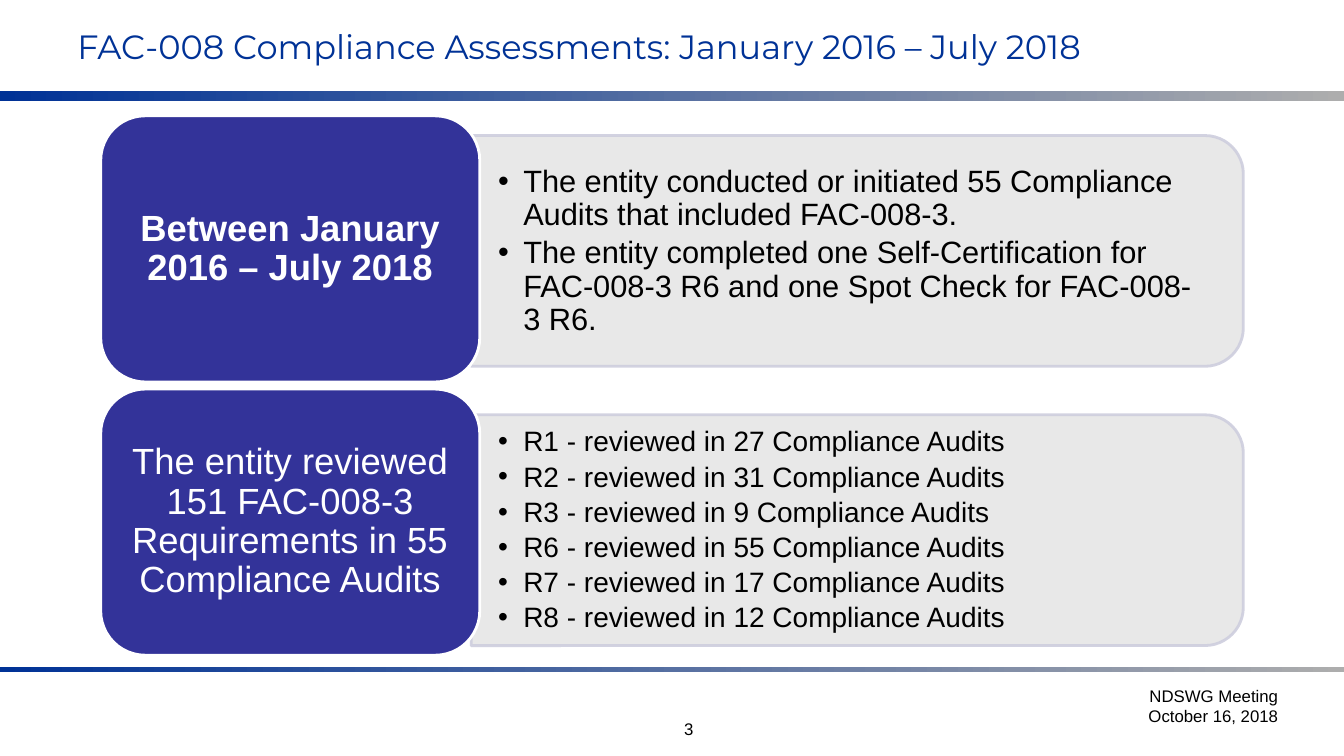
"""Build the FAC-008 compliance assessment slide."""
from dataclasses import dataclass
from typing import Any, NamedTuple

from lxml import etree
from pptx import Presentation
from pptx.dml.color import RGBColor
from pptx.enum.shapes import MSO_SHAPE
from pptx.enum.text import MSO_ANCHOR, MSO_AUTO_SIZE, PP_ALIGN
from pptx.oxml.ns import qn
from pptx.shapes.autoshape import Shape
from pptx.slide import Slide
from pptx.util import Inches, Pt

RECT, TILE, PANEL = MSO_SHAPE.RECTANGLE, MSO_SHAPE.ROUNDED_RECTANGLE, MSO_SHAPE.ROUND_2_SAME_RECTANGLE
LEFT, CENTER, RIGHT = PP_ALIGN.LEFT, PP_ALIGN.CENTER, PP_ALIGN.RIGHT
TOP, MIDDLE = MSO_ANCHOR.TOP, MSO_ANCHOR.MIDDLE
NO_FIT = MSO_AUTO_SIZE.NONE
WIDTH, HEIGHT = Inches(13.33), Inches(7.5)


@dataclass(frozen=True)
class Theme:
    """Colours, fonts and type sizes of the slide."""
    title: str = "003296"
    fade: str = "ADADAD"
    tile: str = "333399"
    panel: str = "E6E6E6"
    edge: str = "CECEDE"
    light: str = "FFFFFF"
    ink: str = "000000"
    title_font: str = "Montserrat"
    body_font: str = "Arial"
    title_size: int = 24
    tile_size: int = 26
    small_size: int = 12


class Box(NamedTuple):
    """A place in percent of the slide's width and height."""
    left: float
    top: float
    width: float
    height: float

    def emu(self) -> tuple[int, int, int, int]:
        """Convert the shares to slide lengths."""
        return (round(WIDTH * self.left / 100), round(HEIGHT * self.top / 100),
                round(WIDTH * self.width / 100), round(HEIGHT * self.height / 100))


class Style(NamedTuple):
    """Font and paragraph settings of a text."""
    size: int
    color: str
    align: PP_ALIGN = LEFT
    font: str = "Arial"
    bold: bool = False
    anchor: MSO_ANCHOR = TOP
    insets: tuple[float, float] = (0.1, 0.05)
    spacing: float = 1.0
    after: float = 0
    bulleted: bool = False


class Topic(NamedTuple):
    """A heading tile with the findings on the panel beside it."""
    heading: str
    bold: bool
    tile_top: float
    panel_top: float
    size: int
    findings: list[str]


THEME = Theme()
REVIEWS = {"R1": 27, "R2": 31, "R3": 9, "R6": 55, "R7": 17, "R8": 12}
TOPICS = [
    Topic("Between January 2016 – July 2018", True, 15.33, 17.93, 22, [
        "The entity conducted or initiated 55 Compliance Audits that included FAC-008-3.",
        "The entity completed one Self-Certification for FAC-008-3 R6 "
        "and one Spot Check for FAC-008-3 R6."]),
    Topic("The entity reviewed 151 FAC-008-3 Requirements in 55 Compliance Audits",
          False, 51.47, 54.87, 20,
          [f"{requirement} - reviewed in {audits} Compliance Audits"
           for requirement, audits in REVIEWS.items()]),
]
RULES = [Box(0, 12, 100, 1.33), Box(0, 88.27, 100, 0.67)]


def apply(target: Any, formats: dict[str, Any]) -> None:
    """Set each format value on the target."""
    for name, value in formats.items():
        setattr(target, name, value)


def write(holder: Any, lines: list[str], style: Style) -> None:
    """Fill a shape or placeholder with styled paragraphs."""
    frame = holder.text_frame
    side, end = map(Inches, style.insets)
    apply(frame, {"word_wrap": True, "auto_size": NO_FIT, "vertical_anchor": style.anchor,
                  "margin_left": side, "margin_right": side,
                  "margin_top": end, "margin_bottom": end})
    for index, line in enumerate(lines):
        paragraph = frame.paragraphs[0] if index == 0 else frame.add_paragraph()
        apply(paragraph, {"alignment": style.align, "line_spacing": style.spacing,
                          "space_before": Pt(0), "space_after": Pt(style.after)})
        if style.bulleted:
            paragraph.level = 1
            properties = paragraph._p.get_or_add_pPr()
            properties.set("marL", str(Inches(0.25)))
            properties.set("indent", str(Inches(-0.25)))
            etree.SubElement(properties, qn("a:buFont")).set("typeface", style.font)
            etree.SubElement(properties, qn("a:buChar")).set("char", "•")
        run = paragraph.add_run()
        run.text = line
        apply(run.font, {"name": style.font, "size": Pt(style.size), "bold": style.bold})
        run.font.color.rgb = RGBColor.from_string(style.color)


def place(holder: Any, box: Box) -> None:
    """Move a placeholder to a box."""
    apply(holder, dict(zip(("left", "top", "width", "height"), box.emu())))


def add_block(slide: Slide, kind: MSO_SHAPE, box: Box, fill: str, edge: str) -> Shape:
    """Add a filled and outlined preset shape."""
    block = slide.shapes.add_shape(kind, *box.emu())
    block.shadow.inherit = False
    block.fill.solid()
    block.fill.fore_color.rgb = RGBColor.from_string(fill)
    block.line.color.rgb = RGBColor.from_string(edge)
    block.line.width = Pt(2)
    return block


def add_rule(slide: Slide, box: Box) -> None:
    """Add a bar that fades from left to right."""
    rule = slide.shapes.add_shape(RECT, *box.emu())
    rule.shadow.inherit = False
    rule.line.fill.background()
    rule.fill.gradient()
    rule.fill.gradient_angle = 0
    for stop, color in zip(rule.fill.gradient_stops, (THEME.title, THEME.fade)):
        stop.color.rgb = RGBColor.from_string(color)


def add_panel(slide: Slide, box: Box) -> None:
    """Add a translucent panel rounded on its right side."""
    panel = add_block(slide, PANEL, box, THEME.panel, THEME.edge)
    left, top, width, height = box.emu()
    apply(panel, {"left": left + (width - height) // 2, "top": top + (height - width) // 2,
                  "width": height, "height": width, "rotation": 90})
    for color in panel.element.spPr.iter(qn("a:srgbClr")):
        etree.SubElement(color, qn("a:alpha")).set("val", "90000")


def add_topic(slide: Slide, topic: Topic, findings: Any) -> None:
    """Draw a topic's panel, findings and heading tile."""
    add_panel(slide, Box(35.06, topic.panel_top, 57.45, 30.53))
    place(findings, Box(35.03, topic.panel_top + 1.53, 56.63, 27.6))
    slide.shapes.element.append(findings.element)
    write(findings, topic.findings,
          Style(topic.size, THEME.ink, anchor=MIDDLE, insets=(0.27, 0.14),
                spacing=0.9, after=3.5, bulleted=True))
    tile = add_block(slide, TILE, Box(7.5, topic.tile_top, 28.2, 35.2), THEME.tile, THEME.light)
    write(tile, [topic.heading],
          Style(THEME.tile_size, THEME.light, CENTER, bold=topic.bold, anchor=MIDDLE,
                insets=(0.11, 0.05), spacing=0.9))


def add_note(slide: Slide, box: Box, lines: list[str], align: PP_ALIGN) -> None:
    """Add small text at the foot of the slide."""
    write(slide.shapes.add_textbox(*box.emu()), lines,
          Style(THEME.small_size, THEME.ink, align, THEME.body_font))


def main() -> None:
    """Build and save the presentation."""
    deck = Presentation()
    apply(deck, {"slide_width": WIDTH, "slide_height": HEIGHT})
    slide = deck.slides.add_slide(deck.slide_layouts[3])
    title, *bodies = slide.placeholders
    for rule in RULES:
        add_rule(slide, rule)
    place(title, Box(5, 1.07, 91.67, 10))
    write(title, ["FAC-008 Compliance Assessments: January 2016 – July 2018"],
          Style(THEME.title_size, THEME.title, font=THEME.title_font, anchor=MIDDLE))
    for topic, findings in zip(TOPICS, bodies):
        add_topic(slide, topic, findings)
    add_note(slide, Box(37.5, 94.4, 27.5, 5.6), ["3"], CENTER)
    add_note(slide, Box(68.35, 90, 27.5, 10), ["NDSWG Meeting", "October 16, 2018"], RIGHT)
    deck.save("out.pptx")


if __name__ == "__main__":
    main()
